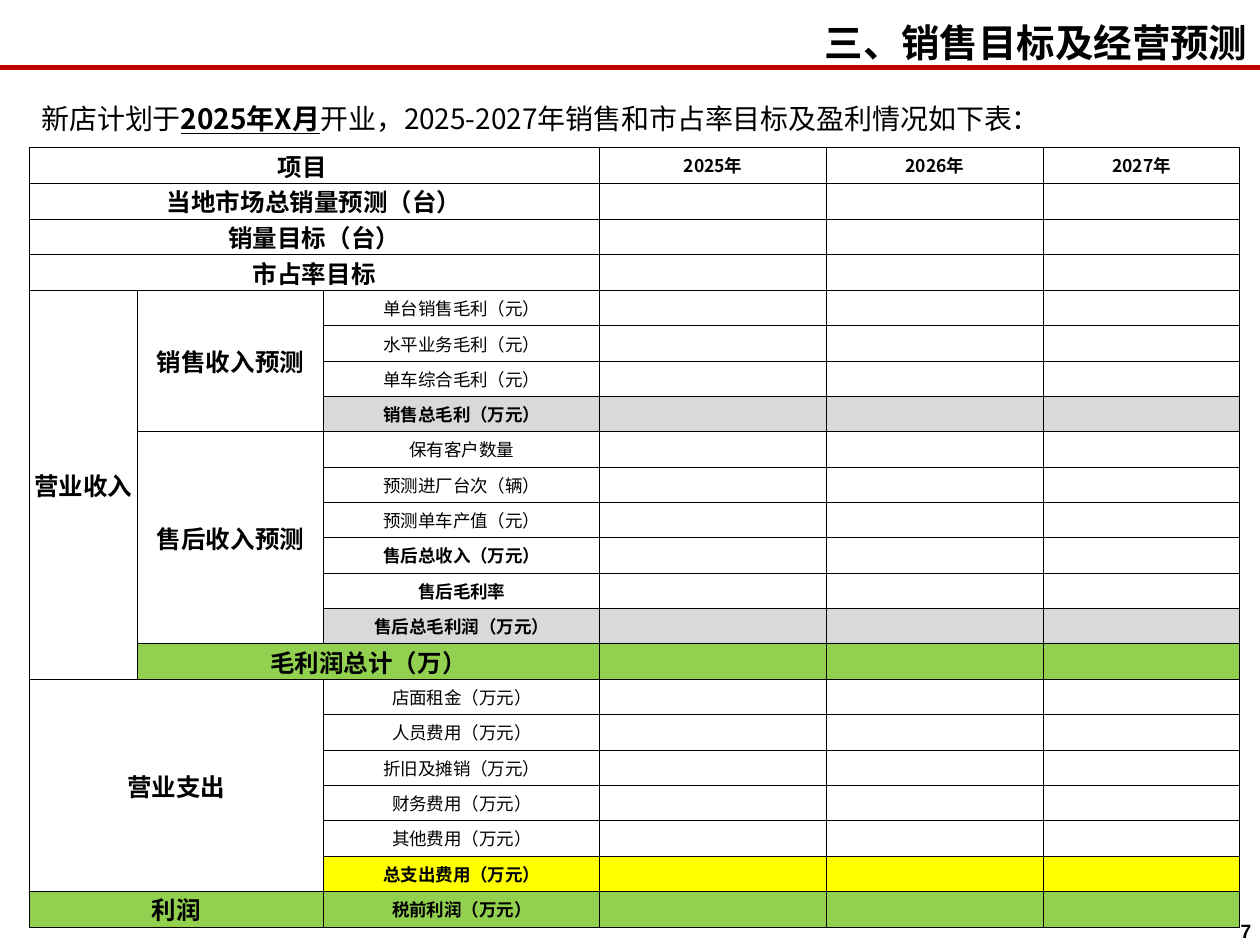
from lxml.etree import SubElement
from pptx import Presentation
from pptx.dml.color import RGBColor as Color
from pptx.enum.shapes import MSO_SHAPE as Preset
from pptx.enum.text import MSO_ANCHOR as Anchor, PP_ALIGN as Align
from pptx.oxml.ns import qn
from pptx.util import Inches, Pt

THEME = {
    "cjk": "Noto Sans CJK SC", "latin": "Arial",
    "ink": "000000", "rule": "C00000", "white": "FFFFFF",
    "subtotal": "D9D9D9", "total": "92D050", "expense": "FFFF00",
    "title": 22, "intro": 16, "group": 14, "item": 10, "number": 11,
}
WIDTH, HEIGHT = 10, 7.5


def add_span(para, text, size, font=THEME["cjk"], **formats):
    span = para.add_run()
    span.text = text
    values = {"size": Pt(THEME[size]), "name": font, **formats}
    for name, value in values.items():
        setattr(span.font, name, value)
    span.font.color.rgb = Color.from_string(THEME["ink"])
    SubElement(span.font._element, qn("a:ea"), typeface=font)


def style_cell(cell, fill):
    """Set zero margins, a solid fill and thin borders on all four sides."""
    formats = {"margin_left": 0, "margin_right": 0, "margin_top": 0,
               "margin_bottom": 0, "vertical_anchor": Anchor.MIDDLE}
    for name, value in formats.items():
        setattr(cell, name, value)
    properties = cell._tc.get_or_add_tcPr()
    for side in ("a:lnL", "a:lnR", "a:lnT", "a:lnB"):
        border = SubElement(properties, qn(side), w=str(Pt(0.5)))
        SubElement(SubElement(border, qn("a:solidFill")), qn("a:srgbClr"), val=THEME["ink"])
    cell.fill.solid()
    cell.fill.fore_color.rgb = Color.from_string(THEME[fill])


deck = Presentation()
deck.slide_width, deck.slide_height = Inches(WIDTH), Inches(HEIGHT)
page = deck.slides.add_slide(deck.slide_layouts[5])

# Header
rule = page.shapes.add_shape(Preset.RECTANGLE, 0, Inches(0.52), Inches(WIDTH), Inches(0.03))
rule.shadow.inherit = False
rule.fill.solid()
rule.fill.fore_color.rgb = rule.line.color.rgb = Color.from_string(THEME["rule"])
rule.line.width = Pt(0.75)

title = page.shapes.title
place = {"left": 3.99, "top": 0.04, "width": 6.01, "height": 0.51}
for name, value in place.items():
    setattr(title, name, Inches(value))
title.text_frame.vertical_anchor = Anchor.MIDDLE
para = title.text_frame.paragraphs[0]
para.alignment, para.line_spacing = Align.RIGHT, 1.2
add_span(para, "三、销售目标及经营预测", "title", bold=True)

# Forecast table: (row, column, rows spanned, columns spanned, text)
GROUPS = [
    (0, 0, 1, 3, "项目　"),
    (1, 0, 1, 3, "当地市场总销量预测（台）"),
    (2, 0, 1, 3, "销量目标（台）"),
    (3, 0, 1, 3, "市占率目标"),
    (4, 0, 11, 1, "营业收入"),
    (4, 1, 4, 1, "销售收入预测"),
    (8, 1, 6, 1, "售后收入预测"),
    (14, 1, 1, 2, "毛利润总计（万）"),
    (15, 0, 6, 2, "营业支出"),
    (21, 0, 1, 2, "利润"),
]
ITEMS = {
    4: ["单台销售毛利（元）", "水平业务毛利（元）", "单车综合毛利（元）", "销售总毛利（万元）",
        "保有客户数量", "预测进厂台次（辆）", "预测单车产值（元）", "售后总收入（万元）",
        "售后毛利率", "售后总毛利润（万元）"],
    15: ["店面租金（万元）", "人员费用（万元）", "折旧及摊销（万元）", "财务费用（万元）",
         "其他费用（万元）", "总支出费用（万元）", "税前利润（万元）"],
}
BOLD_ROWS = {7, 11, 12, 13, 20, 21}
# Row: (fill, first filled column)
FILLS = {7: ("subtotal", 2), 13: ("subtotal", 2), 14: ("total", 1),
         20: ("expense", 2), 21: ("total", 0)}
COLUMNS = [0.86, 1.48, 2.19, 1.8, 1.72, 1.56]
ROWS, TABLE_HEIGHT = 22, 6.17

table = page.shapes.add_table(ROWS, len(COLUMNS), Inches(0.23), Inches(1.17),
                              Inches(sum(COLUMNS)), Inches(TABLE_HEIGHT)).table
table.first_row = table.horz_banding = False
for column, width in zip(table.columns, COLUMNS):
    column.width = Inches(width)

labels = {(row, col): (text, "group", True) for row, col, _, _, text in GROUPS}
for first, texts in ITEMS.items():
    for row, text in enumerate(texts, first):
        labels[row, 2] = (text, "item", row in BOLD_ROWS)
for col, year in enumerate(range(2025, 2028), 3):
    labels[0, col] = (f"{year}年", "item", True)

for row in range(ROWS):
    table.rows[row].height = Inches(TABLE_HEIGHT / ROWS)
    fill, first = FILLS.get(row, ("white", 0))
    for col in range(len(COLUMNS)):
        cell = table.cell(row, col)
        style_cell(cell, fill if col >= first else "white")
        para = cell.text_frame.paragraphs[0]
        para.alignment = Align.CENTER
        if (row, col) in labels:
            text, size, bold = labels[row, col]
            add_span(para, text, size, bold=bold)
        else:
            SubElement(para._p, qn("a:endParaRPr"), sz=str(THEME["item"] * 100))
for row, col, down, across, _ in GROUPS:
    if down * across > 1:
        table.cell(row, col).merge(table.cell(row + down - 1, col + across - 1))

# Introduction and page number
intro = page.shapes.add_textbox(Inches(0.23), Inches(0.62), Inches(9.53), Inches(0.5))
intro.text_frame.word_wrap = True
para = intro.text_frame.paragraphs[0]
para.line_spacing = 1.5
for text, marked in [("新店计划于", False), ("2025年X月", True),
                     ("开业，2025-2027年销售和市占率目标及盈利情况如下表：", False)]:
    add_span(para, text, "intro", bold=marked, underline=marked)

number = page.shapes.add_textbox(Inches(9.12), Inches(7.25), Inches(0.91), Inches(0.52))
number.text_frame.word_wrap = True
para = number.text_frame.paragraphs[0]
para.alignment = Align.RIGHT
add_span(para, "7", "number", THEME["latin"], bold=True)

deck.save("out.pptx")
